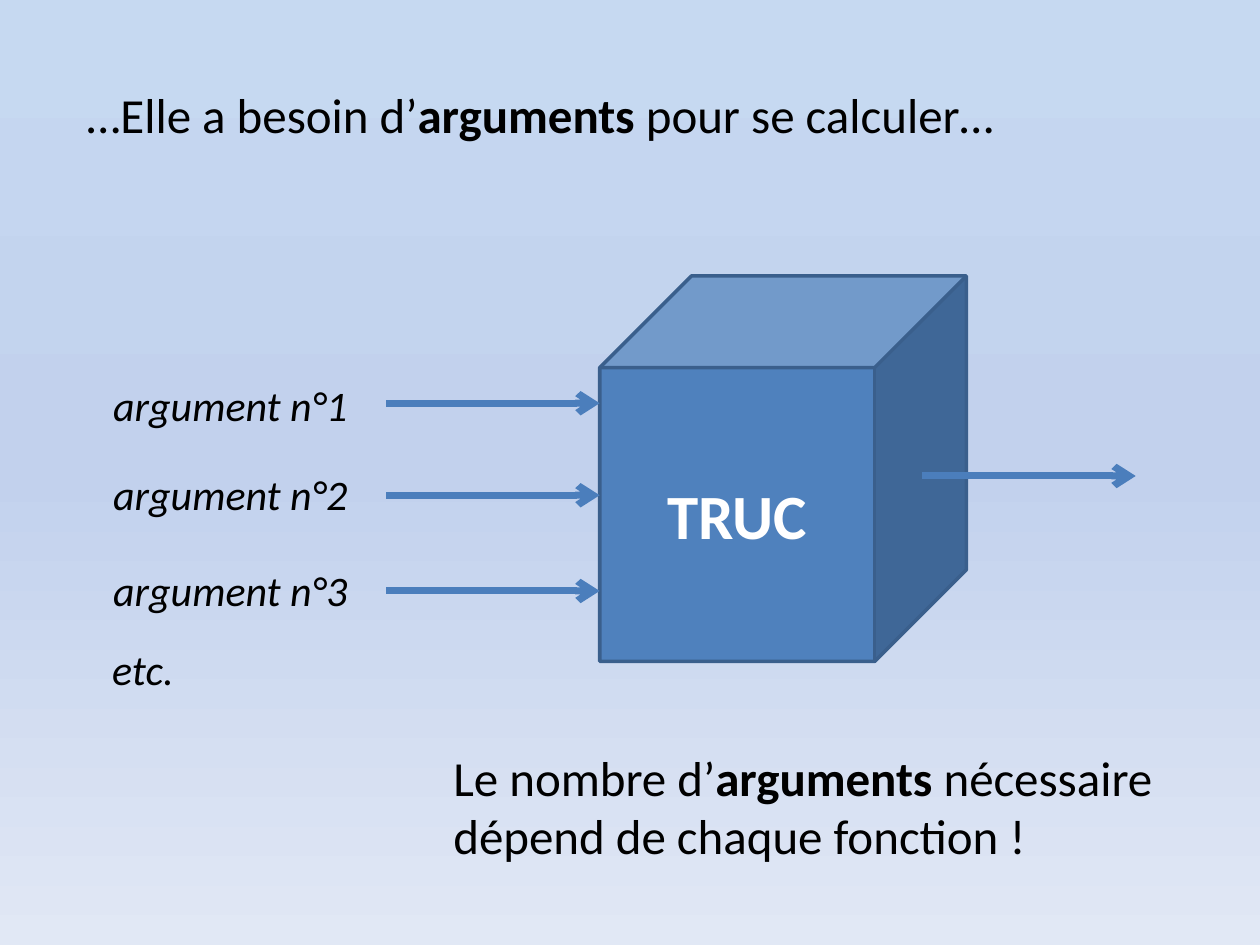
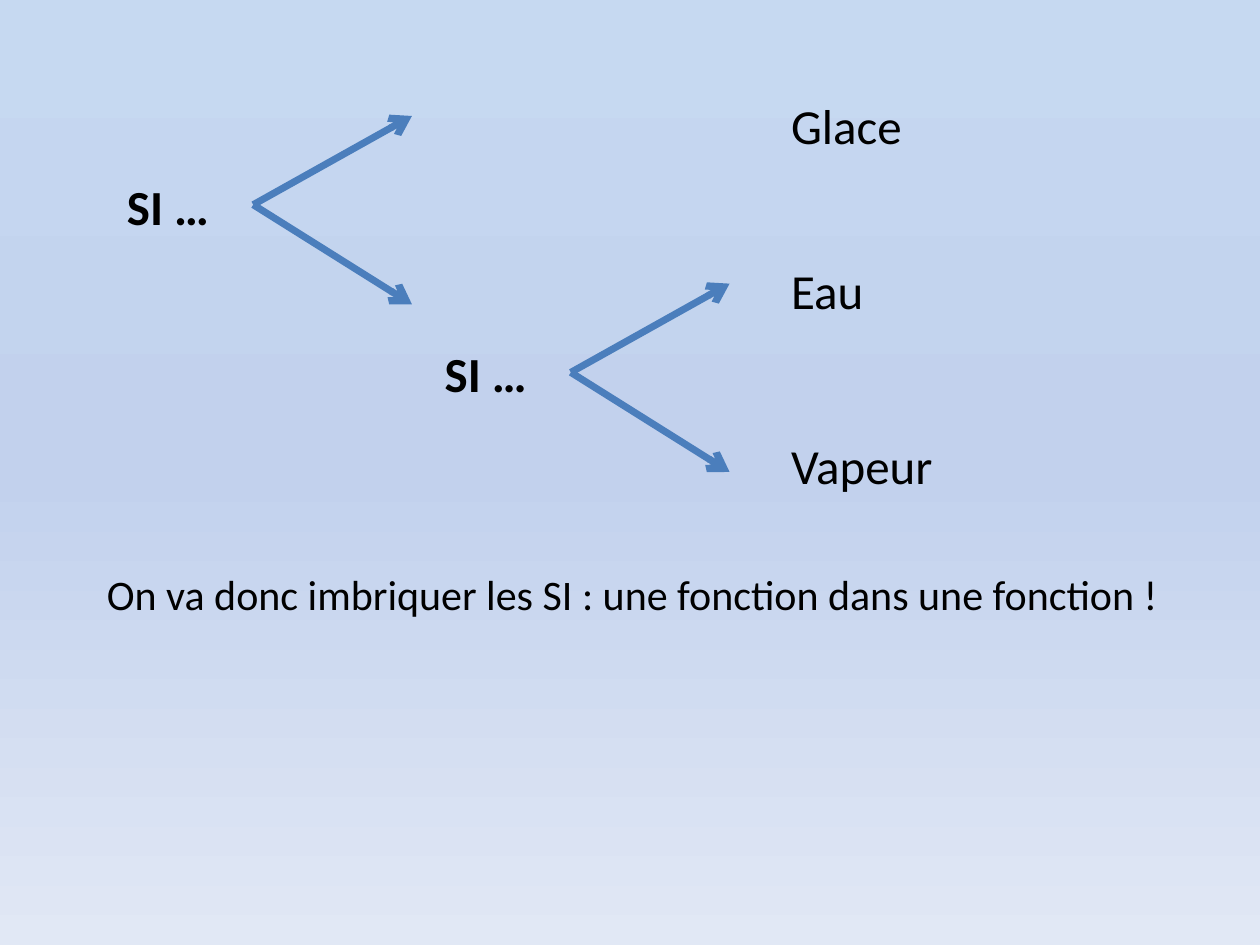
from copy import deepcopy

from lxml.etree import SubElement
from pptx import Presentation
from pptx.dml.color import RGBColor
from pptx.enum.shapes import MSO_CONNECTOR, MSO_SHAPE
from pptx.enum.text import MSO_ANCHOR, PP_ALIGN
from pptx.oxml.ns import qn
from pptx.util import Pt

FONT = "Calibri"
BLACK = RGBColor(0x00, 0x00, 0x00)
WHITE = RGBColor(0xFF, 0xFF, 0xFF)
CUBE_FILL = RGBColor(0x4F, 0x81, 0xBD)
CUBE_LINE = RGBColor(0x3A, 0x5F, 0x8C)
ARROW = RGBColor(0x4B, 0x7E, 0xBC)
BACKGROUND = [
    (0, RGBColor(0xC6, 0xD9, 0xF1)),
    (0.5, RGBColor(0xC2, 0xD1, 0xED)),
    (1, RGBColor(0xE1, 0xE8, 0xF5)),
]

INTRO = "…Elle a besoin d’**arguments** pour se calculer…"
FUNCTION_NAME = "TRUC"
ARGUMENTS = [
    ("argument n°1", 230.4, 213.1),
    ("argument n°2", 283, 264.2),
    ("argument n°3", 337.7, 319),
]
MORE_ARGUMENTS = "etc."
REMARK = "Le nombre d’**arguments** nécessaire \ndépend de chaque fonction !"

CONDITION = "**SI …**"
CONDITION_PLACES = [(65.5, 97.2), (247, 193)]
OUTCOMES = [("Glace", 51.1, 119), ("Eau", 145.4, 119), ("Vapeur", 245.5, 211)]
CONCLUSION = "On va donc imbriquer les SI : une fonction dans une fonction !"

CUBE = (342.7, 157.7, 209.5, 220.3)
ARROW_LENGTH = 122
FORK_OFFSET = (79.2, 19.8)
FORK_REACH = 90.7
FORK_RISES = (-50.7, 56.9)


def write(frame, text, size=28, color=BLACK, bold=False, italic=False, align=PP_ALIGN.LEFT):
    para = frame.paragraphs[0]
    para.alignment = align
    for index, piece in enumerate(text.split("**")):
        for number, line in enumerate(piece.split("\n")):
            if number:
                para.add_line_break()
            if not line:
                continue
            span = para.add_run()
            span.text = line
            span.font.name = FONT
            span.font.size = Pt(size)
            span.font.color.rgb = color
            span.font.bold = bold or index % 2 == 1
            span.font.italic = italic


def add_text(page, text, left, top, width, height=41, wrap=False, **style):
    box = page.shapes.add_textbox(Pt(left), Pt(top), Pt(width), Pt(height))
    box.text_frame.word_wrap = wrap
    write(box.text_frame, text, **style)


def add_arrow(page, left, top, across, down=0):
    arrow = page.shapes.add_connector(
        MSO_CONNECTOR.STRAIGHT, Pt(left), Pt(top), Pt(left + across), Pt(top + down)
    )
    arrow.line.color.rgb = ARROW
    arrow.line.width = Pt(4)
    SubElement(arrow.line._get_or_add_ln(), qn("a:tailEnd"), type="arrow")
    SubElement(arrow._element.spPr, qn("a:effectLst"))


def add_page(deck):
    page = deck.slides.add_slide(deck.slide_layouts[6])
    fill = page.background.fill
    fill.gradient()
    fill.gradient_angle = 270
    stop_list = page.element.xpath(".//a:gsLst")[0]
    stop_list.append(deepcopy(stop_list[0]))
    for stop, (position, color) in zip(fill.gradient_stops, BACKGROUND):
        stop.position = position
        stop.color.rgb = color
    return page


def add_cube(page):
    cube = page.shapes.add_shape(MSO_SHAPE.CUBE, *map(Pt, CUBE))
    cube.shadow.inherit = False
    cube.fill.solid()
    cube.fill.fore_color.rgb = CUBE_FILL
    cube.line.color.rgb = CUBE_LINE
    cube.line.width = Pt(2)
    cube.text_frame.vertical_anchor = MSO_ANCHOR.MIDDLE
    write(cube.text_frame, FUNCTION_NAME, size=36, color=WHITE, bold=True, align=PP_ALIGN.CENTER)


def build_arguments(deck):
    page = add_page(deck)
    add_cube(page)
    add_text(page, INTRO, 42.5, 44.6, 534)
    add_arrow(page, 527, 272, ARROW_LENGTH)
    label = {"height": 36, "size": 24, "italic": True}
    for name, arrow_top, label_top in ARGUMENTS:
        add_arrow(page, CUBE[0] - ARROW_LENGTH, arrow_top, ARROW_LENGTH)
        add_text(page, name, 57.6, label_top, 149, **label)
    add_text(page, MORE_ARGUMENTS, 57, 364.3, 49.7, **label)
    add_text(page, REMARK, 252, 423.4, 427, 75)


def build_nesting(deck):
    page = add_page(deck)
    for outcome, top, width in OUTCOMES:
        add_text(page, outcome, 445, top, width, wrap=True)
    for left, top in CONDITION_PLACES:
        for rise in FORK_RISES:
            add_arrow(page, left + FORK_OFFSET[0], top + FORK_OFFSET[1], FORK_REACH, rise)
        add_text(page, CONDITION, left, top, 67.7, wrap=True)
    add_text(page, CONCLUSION, 54, 321.1, 620.6, 36, size=24)


def main():
    deck = Presentation()
    deck.slide_width = Pt(720)
    deck.slide_height = Pt(540)
    build_arguments(deck)
    build_nesting(deck)
    deck.save("out.pptx")


if __name__ == "__main__":
    main()
